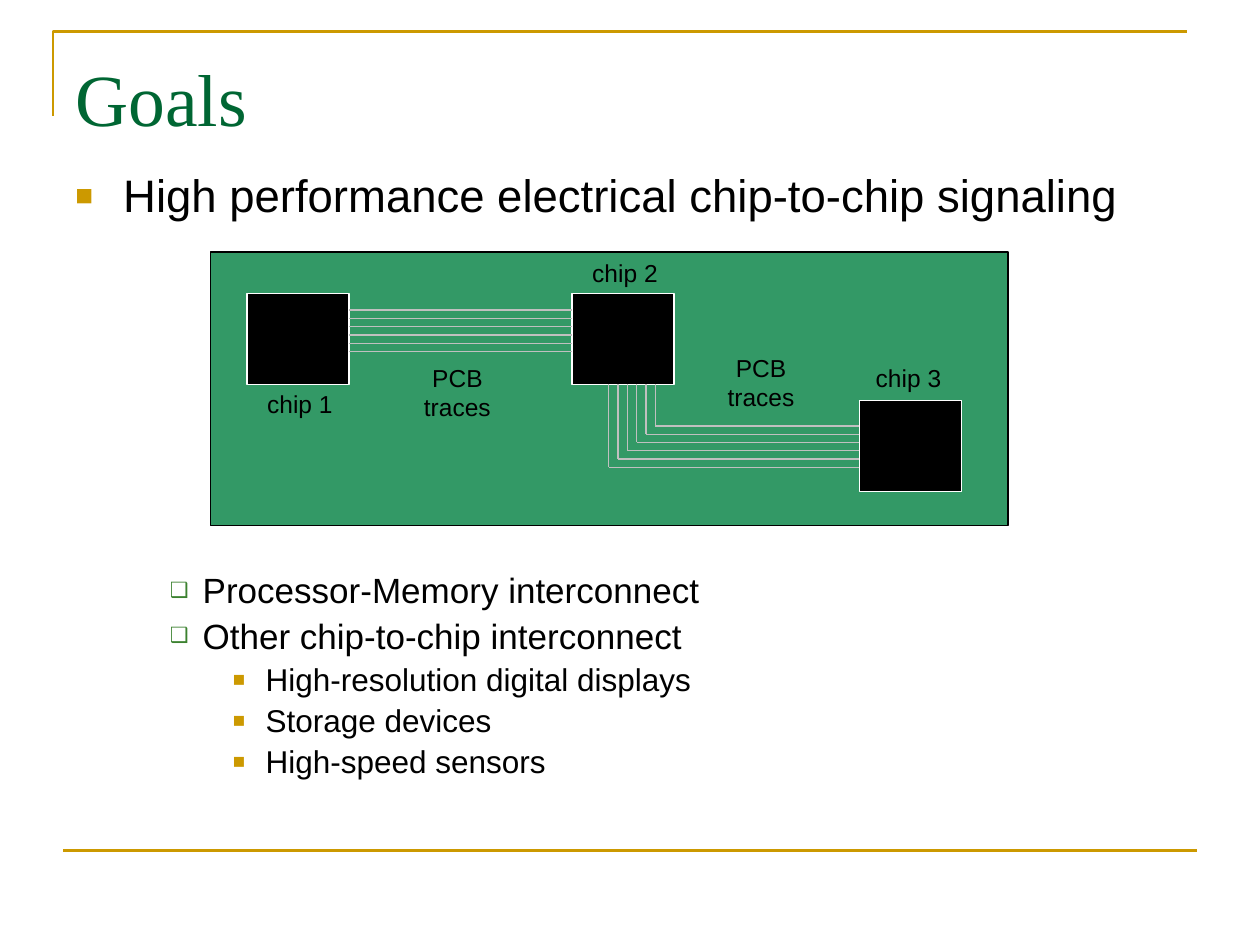
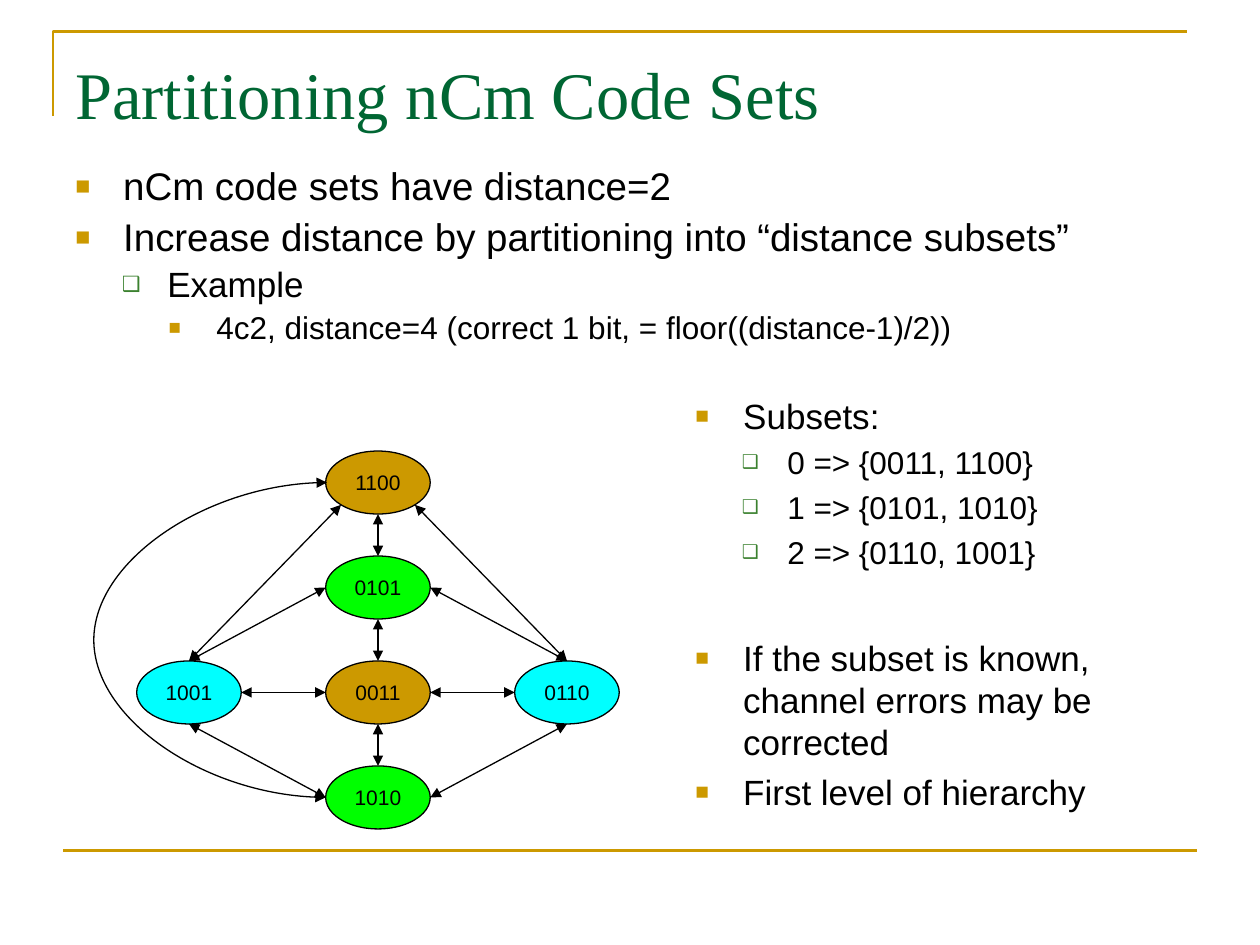
"""Build two slides on chip-to-chip signaling and nCm code sets."""
from dataclasses import dataclass
from math import sqrt

from lxml import etree
from pptx import Presentation
from pptx.dml.color import RGBColor
from pptx.enum.shapes import MSO_CONNECTOR, MSO_SHAPE
from pptx.enum.text import MSO_ANCHOR, PP_ALIGN
from pptx.oxml.ns import qn
from pptx.util import Inches, Pt

STRAIGHT, CURVE = MSO_CONNECTOR.STRAIGHT, MSO_CONNECTOR.CURVE
RECTANGLE, OVAL = MSO_SHAPE.RECTANGLE, MSO_SHAPE.OVAL
CENTER, MIDDLE = PP_ALIGN.CENTER, MSO_ANCHOR.MIDDLE


@dataclass(frozen=True)
class Theme:
    gold: str = "CC9900"
    title: str = "006633"
    bullet: str = "3B812F"
    board: str = "339966"
    trace: str = "C0C0C0"
    lime: str = "00FF00"
    cyan: str = "00FFFF"
    black: str = "000000"
    white: str = "FFFFFF"
    title_font: str = "Times New Roman"
    body_font: str = "Arial"
    label_size: int = 14
    node_size: int = 12
    thin: float = 0.75
    frame: float = 1.5


THEME = Theme()
WIDTH, HEIGHT = 10, 7.5
BULLETS = [("■", THEME.gold, 65), ("❑", THEME.bullet, 60), ("■", THEME.gold, 65)]
INDENTS = [(0.38, 0.38), (0.73, 0.36), (1.12, 0.38)]
DEEP_INDENTS = [(0.38, 0.38), (0.76, 0.26), (1.26, 0.26)]

GOAL = [(0, 26, "High performance electrical chip-to-chip signaling")]
USES = [
    (1, 20, "Processor-Memory interconnect"),
    (1, 20, "Other chip-to-chip interconnect"),
    (2, 18, "High-resolution digital displays"),
    (2, 18, "Storage devices"),
    (2, 18, "High-speed sensors"),
]
BOARD = (1.67, 2, 6.33, 2.17)
CHIP_WIDTH, CHIP_HEIGHT = 0.81, 0.72
CHIPS = [(1.96, 2.33), (4.54, 2.33), (6.82, 3.18)]
BOARD_LABELS = [
    ("chip 1", 1.92, 3.04, 0.33),
    ("chip 2", 4.5, 2, 0.33),
    ("chip 3", 6.75, 2.83, 0.33),
    ("PCB traces", 3.17, 2.83, 0.57),
    ("PCB traces", 5.58, 2.75, 0.57),
]
LABEL_WIDTH = 0.92
TRACE_COUNT, TRACE_STEP, BEND_STEP = 6, 0.066, 0.074

PARTITIONING = [
    (0, 22, "nCm code sets have distance=2"),
    (0, 22, "Increase distance by partitioning into “distance subsets”"),
    (1, 20, "Example"),
    (2, 18, "4c2, distance=4 (correct 1 bit, = floor((distance-1)/2))"),
]
SUBSETS = [
    (0, 20, "Subsets:"),
    (1, 18, "0 => {0011, 1100}"),
    (1, 18, "1 => {0101, 1010}"),
    (1, 18, "2 => {0110, 1001}"),
]
CONCLUSIONS = [
    (0, 20, "If the subset is known, channel errors may be corrected"),
    (0, 20, "First level of hierarchy"),
]
NODES = {
    "1100": (1, 0, THEME.gold),
    "0101": (1, 1, THEME.lime),
    "1001": (0, 2, THEME.cyan),
    "0011": (1, 2, THEME.gold),
    "0110": (2, 2, THEME.cyan),
    "1010": (1, 3, THEME.lime),
}
EDGES = [
    ("0011", "left", "1001", "right"),
    ("0011", "bottom", "1010", "top"),
    ("0011", "right", "0110", "left"),
    ("0011", "top", "0101", "bottom"),
    ("0101", "left", "1001", "top"),
    ("0101", "right", "0110", "top"),
    ("0101", "top", "1100", "bottom"),
    ("1001", "bottom", "1010", "left"),
    ("1010", "right", "0110", "bottom"),
    ("1100", "lower left", "1001", "top"),
    ("1100", "lower right", "0110", "top"),
]
DIAGONAL = 1 / sqrt(2)
SIDES = {
    "left": (-1, 0), "right": (1, 0), "top": (0, -1), "bottom": (0, 1),
    "lower left": (-DIAGONAL, DIAGONAL), "lower right": (DIAGONAL, DIAGONAL),
}
NODE_WIDTH, NODE_HEIGHT = 0.83, 0.5
FIRST_X, FIRST_Y, COLUMN_STEP, ROW_STEP = 1.5, 3.83, 1.5, 0.833
CURVE_REACH, CURVE_WIDTH = 1.87, 0.01


def color(value):
    return RGBColor.from_string(value)


def box(*lengths):
    return [Inches(length) for length in lengths]


def set_font(paragraph, size, name=THEME.body_font, fill=THEME.black):
    font = paragraph.font
    font.size, font.name = Pt(size), name
    font.color.rgb = color(fill)


def add_text(slide, text, place, size, name=THEME.body_font, fill=THEME.black, align=None):
    frame = slide.shapes.add_textbox(*box(*place)).text_frame
    frame.word_wrap = True
    paragraph = frame.paragraphs[0]
    paragraph.text, paragraph.alignment = text, align
    set_font(paragraph, size, name, fill)


def set_bullet(paragraph, level, indents):
    mark, fill, percent = BULLETS[level]
    left, hang = indents[level]
    properties = paragraph._p.get_or_add_pPr()
    properties.set("marL", str(Inches(left)))
    properties.set("indent", str(-Inches(hang)))
    bullet_color = etree.SubElement(properties, qn("a:buClr"))
    etree.SubElement(bullet_color, qn("a:srgbClr"), val=fill)
    etree.SubElement(properties, qn("a:buSzPct"), val=str(percent * 1000))
    etree.SubElement(properties, qn("a:buFont"), typeface=THEME.body_font)
    etree.SubElement(properties, qn("a:buChar"), char=mark)


def add_list(slide, items, place, spacing=1.0, indents=INDENTS):
    frame = slide.shapes.add_textbox(*box(*place)).text_frame
    frame.word_wrap = True
    for index, (level, size, text) in enumerate(items):
        paragraph = frame.add_paragraph() if index else frame.paragraphs[0]
        paragraph.text, paragraph.level = text, level
        set_bullet(paragraph, level, indents)
        paragraph.line_spacing = spacing
        paragraph.space_before = Pt(round(size * 0.23, 1) if index else 0)
        set_font(paragraph, size)


def add_block(slide, kind, place, fill, line):
    shape = slide.shapes.add_shape(kind, *box(*place))
    shape.shadow.inherit = False
    shape.fill.solid()
    shape.fill.fore_color.rgb = color(fill)
    shape.line.color.rgb = color(line)
    shape.line.width = Pt(THEME.thin)
    return shape


def add_line(slide, start, end, fill, width=THEME.thin, kind=STRAIGHT, arrows=False):
    connector = slide.shapes.add_connector(kind, *box(*start, *end))
    connector.line.color.rgb = color(fill)
    connector.line.width = Pt(width)
    if arrows:
        for tag in ("a:headEnd", "a:tailEnd"):
            etree.SubElement(connector.line._get_or_add_ln(), qn(tag), type="triangle")
    etree.SubElement(connector._element.spPr, qn("a:effectLst"))
    return connector


def start_slide(presentation, title, size):
    slide = presentation.slides.add_slide(presentation.slide_layouts[6])
    builder = slide.shapes.build_freeform(*box(0.42, 0.92))
    builder.add_line_segments([box(0.42, 0.25), box(9.42, 0.25)], close=False)
    corner = builder.convert_to_shape()
    corner.shadow.inherit = False
    corner.fill.background()
    corner.line.color.rgb = color(THEME.gold)
    corner.line.width = Pt(THEME.frame)
    add_line(slide, (0.5, 6.75), (9.5, 6.75), THEME.gold, THEME.frame)
    add_text(slide, title, (0.5, 0.37, 9, 0.7), size, THEME.title_font, THEME.title)
    return slide


def draw_board(slide):
    add_block(slide, RECTANGLE, BOARD, THEME.board, THEME.black)
    for left, top in CHIPS:
        add_block(slide, RECTANGLE, (left, top, CHIP_WIDTH, CHIP_HEIGHT), THEME.black, THEME.white)
    first, second, third = CHIPS
    for index in range(TRACE_COUNT):
        straight_y = first[1] + 0.13 + index * TRACE_STEP
        bend_x = second[0] + 0.66 - index * BEND_STEP
        bend_y = third[1] + 0.2 + index * TRACE_STEP
        add_line(slide, (first[0] + CHIP_WIDTH, straight_y), (second[0], straight_y), THEME.trace)
        add_line(slide, (bend_x, second[1] + CHIP_HEIGHT), (bend_x, bend_y), THEME.trace)
        add_line(slide, (bend_x, bend_y), (third[0], bend_y), THEME.trace)
    for text, left, top, height in BOARD_LABELS:
        add_text(slide, text, (left, top, LABEL_WIDTH, height), THEME.label_size, align=CENTER)


def node_point(name, side=None):
    column, row, _ = NODES[name]
    across, down = SIDES.get(side, (0, 0))
    return (FIRST_X + column * COLUMN_STEP + across * NODE_WIDTH / 2,
            FIRST_Y + row * ROW_STEP + down * NODE_HEIGHT / 2)


def draw_code_graph(slide):
    for name, (_, _, fill) in NODES.items():
        x, y = node_point(name)
        place = (x - NODE_WIDTH / 2, y - NODE_HEIGHT / 2, NODE_WIDTH, NODE_HEIGHT)
        frame = add_block(slide, OVAL, place, fill, THEME.black).text_frame
        frame.margin_left = frame.margin_right = 0
        frame.vertical_anchor = MIDDLE
        paragraph = frame.paragraphs[0]
        paragraph.text, paragraph.alignment = name, CENTER
        set_font(paragraph, THEME.node_size)
    for start, start_side, end, end_side in EDGES:
        add_line(slide, node_point(start, start_side), node_point(end, end_side),
                 THEME.black, arrows=True)
    x, top = node_point("1100", "left")
    _, bottom = node_point("1010", "left")
    curve = add_line(slide, (x, bottom), (x + CURVE_WIDTH, top), THEME.black,
                     kind=CURVE, arrows=True)
    guides = curve._element.spPr.find(qn("a:prstGeom")).get_or_add_avLst()
    bend = round(-CURVE_REACH / CURVE_WIDTH * 100000)
    etree.SubElement(guides, qn("a:gd"), name="adj1", fmla=f"val {bend}")


def main():
    presentation = Presentation()
    presentation.slide_width, presentation.slide_height = box(WIDTH, HEIGHT)

    goals = start_slide(presentation, "Goals", 42)
    add_list(goals, GOAL, (0.5, 1.28, 9, 0.6))
    add_list(goals, USES, (0.75, 4.5, 8.08, 1.76), 0.9, DEEP_INDENTS)
    draw_board(goals)

    code_sets = start_slide(presentation, "Partitioning nCm Code Sets", 38)
    add_list(code_sets, PARTITIONING, (0.5, 1.28, 9, 2.17), 0.9)
    add_list(code_sets, SUBSETS, (5.42, 3.08, 3.42, 1.58))
    draw_code_graph(code_sets)
    add_list(code_sets, CONCLUSIONS, (5.42, 5, 3.42, 1.58))

    presentation.save("out.pptx")


if __name__ == "__main__":
    main()
